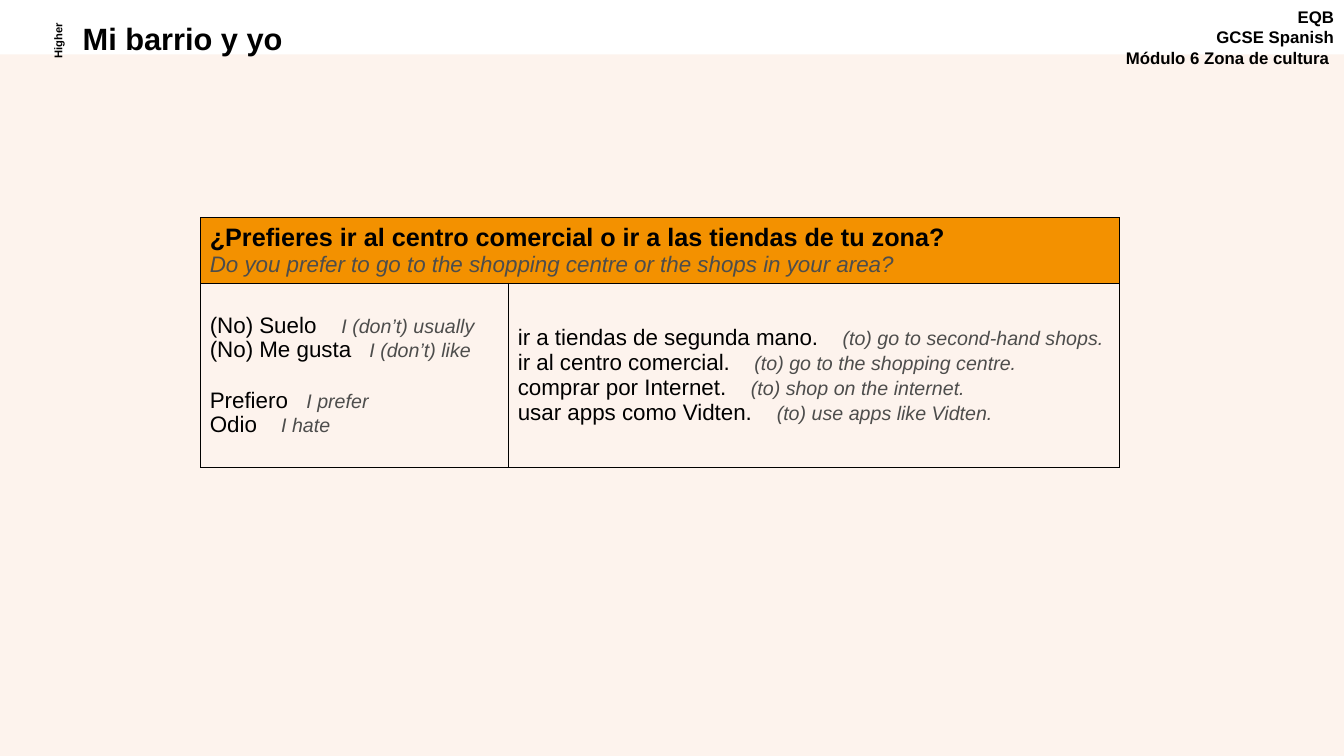
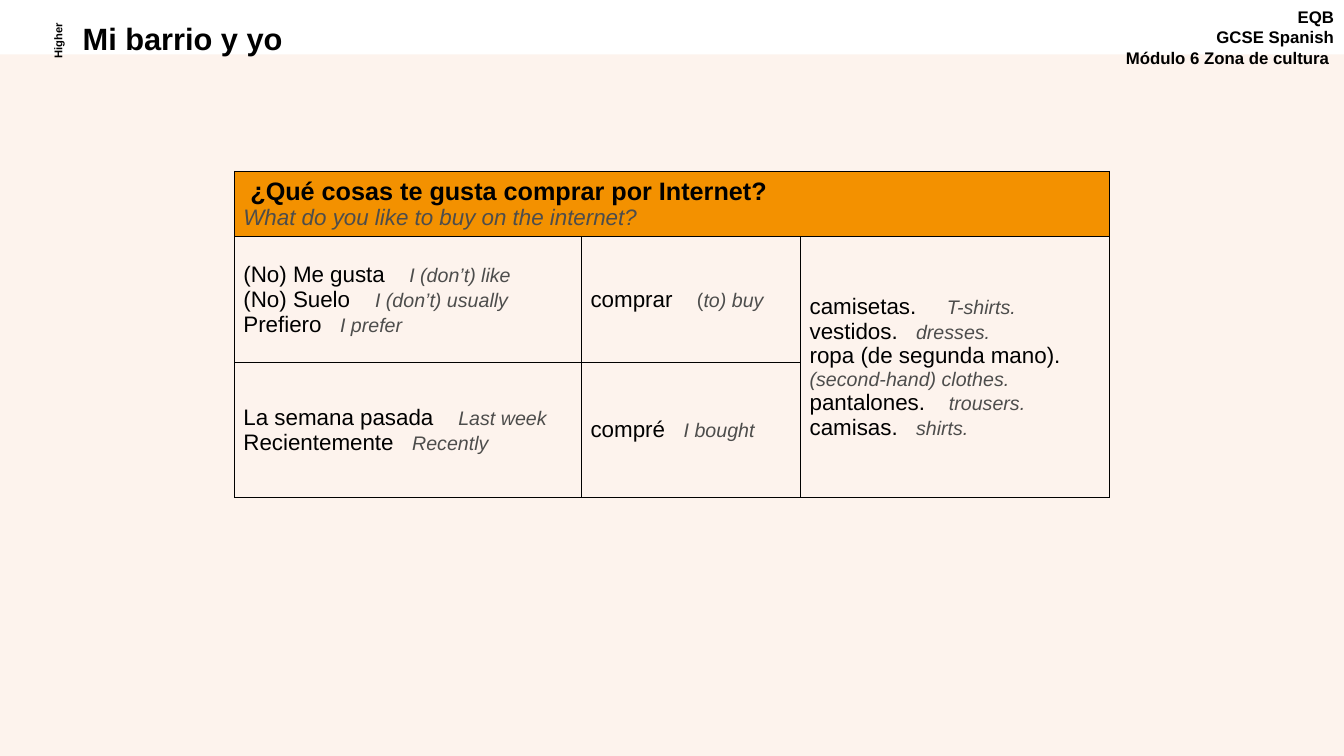
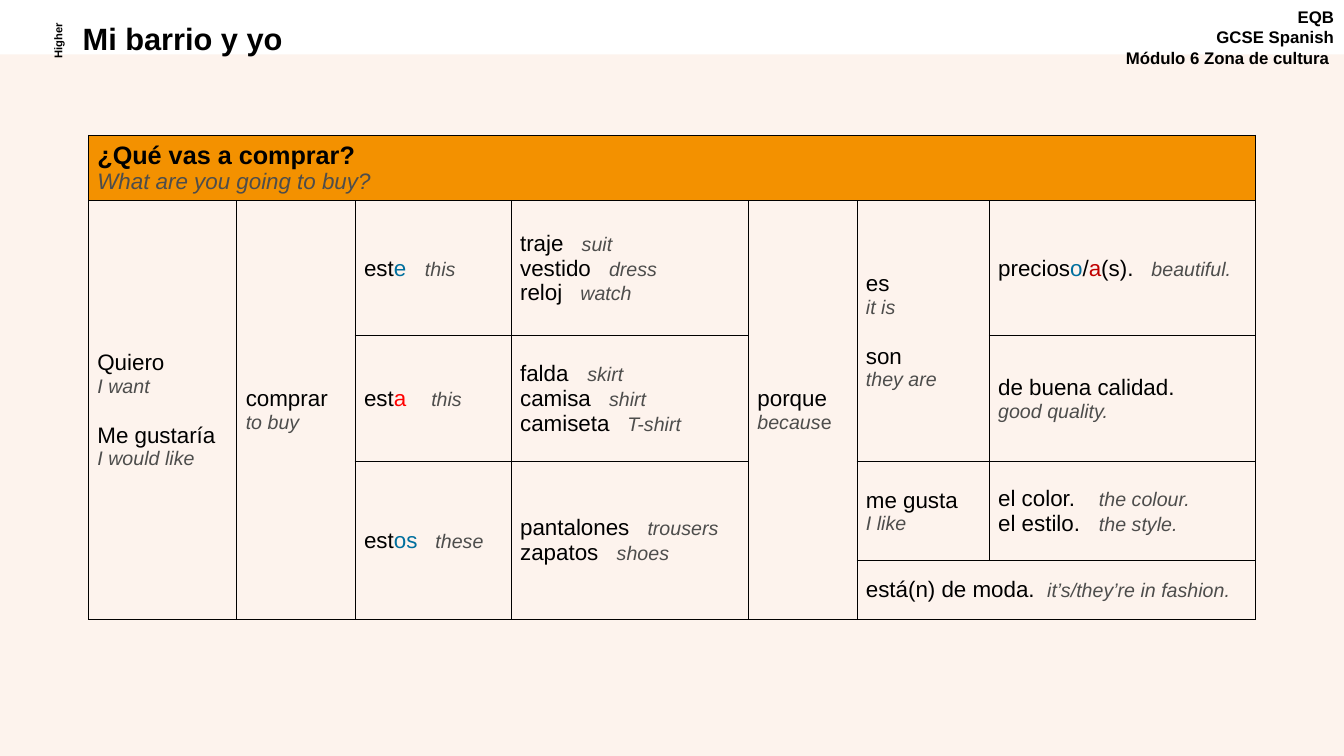
from dataclasses import dataclass

from lxml import etree
from pptx import Presentation
from pptx.dml.color import RGBColor
from pptx.enum.shapes import MSO_SHAPE
from pptx.enum.text import MSO_ANCHOR, PP_ALIGN
from pptx.oxml.ns import qn
from pptx.slide import Slide
from pptx.table import _Cell
from pptx.text.text import TextFrame
from pptx.util import Pt

RECTANGLE = MSO_SHAPE.RECTANGLE
MIDDLE = MSO_ANCHOR.MIDDLE
LEFT, CENTER, RIGHT = PP_ALIGN.LEFT, PP_ALIGN.CENTER, PP_ALIGN.RIGHT

# Colours
BLACK = RGBColor(0x00, 0x00, 0x00)
GREY = RGBColor(0x4D, 0x4D, 0x4C)
ORANGE = RGBColor(0xF3, 0x91, 0x00)
CREAM = RGBColor(0xFD, 0xF3, 0xED)
BLUE = RGBColor(0x00, 0x6F, 0x9E)
DARK_RED = RGBColor(0xC0, 0x00, 0x00)
RED = RGBColor(0xFF, 0x00, 0x00)

# Text formats
FONT = "Arial"
PAGE_TITLE = {"name": FONT, "size": Pt(22), "bold": True, "italic": False}
COURSE = {**PAGE_TITLE, "size": Pt(12)}
TIER = {**PAGE_TITLE, "size": Pt(8)}
QUESTION = {**PAGE_TITLE, "size": Pt(18)}
QUESTION_GLOSS = {"name": FONT, "size": Pt(16), "bold": False, "italic": True}
SPANISH = {"name": FONT, "size": Pt(16), "bold": False, "italic": False}
ENGLISH = {"name": FONT, "size": Pt(14), "bold": False, "italic": True}
ENGLISH_UPRIGHT = {**ENGLISH, "italic": False}

SLIDE_WIDTH, SLIDE_HEIGHT = 960, 540
BODY_TOP = 38.8
GROUP_GAP = 18
BORDER_WIDTH = 0.75
CELL_MARGINS = {"margin_left": Pt(6.4), "margin_right": Pt(6.4),
                "margin_top": Pt(3), "margin_bottom": Pt(3)}


@dataclass(frozen=True)
class Run:
    text: str
    style: dict
    color: RGBColor = BLACK


@dataclass(frozen=True)
class Line:
    runs: tuple[Run, ...]
    tab: float = 0
    gap: float = 0


@dataclass(frozen=True)
class Entry:
    row: int
    col: int
    lines: tuple[Line, ...]
    rows: int = 1
    cols: int = 1


@dataclass(frozen=True)
class Grid:
    left: float
    top: float
    cols: tuple[float, ...]
    rows: tuple[float, ...]
    question: str
    gloss: str
    entries: tuple[Entry, ...]


# Vocabulary lines
def es(text: str, gap: float = 0) -> Line:
    return Line((Run(text, SPANISH),), gap=gap)


def en(text: str) -> Line:
    return Line((Run(text, ENGLISH, GREY),))


def pair(spanish: str, english: str, tab: float, gap: float = 0) -> Line:
    return Line((Run(spanish, SPANISH), Run("\t" + english, ENGLISH, GREY)), tab, gap)


def ending(stem: str, suffix: str, color: RGBColor, english: str, tab: float) -> Line:
    return Line((Run(stem, SPANISH), Run(suffix, SPANISH, color),
                 Run("\t" + english, ENGLISH, GREY)), tab)


# Drawing
def write_lines(frame: TextFrame, lines: tuple[Line, ...],
                align: PP_ALIGN = LEFT, spacing: float = 1.0) -> None:
    for index, line in enumerate(lines):
        paragraph = frame.add_paragraph() if index else frame.paragraphs[0]
        paragraph.alignment = align
        paragraph.line_spacing = spacing
        paragraph.space_before = Pt(line.gap)
        if line.tab:
            stops = etree.SubElement(paragraph._p.get_or_add_pPr(), qn("a:tabLst"))
            etree.SubElement(stops, qn("a:tab"), pos=str(Pt(line.tab)), algn="l")
        for part in line.runs:
            run = paragraph.add_run()
            run.text = part.text
            for key, value in part.style.items():
                setattr(run.font, key, value)
            run.font.color.rgb = part.color


def add_label(slide: Slide, box: tuple[float, ...], texts: tuple[str, ...], style: dict,
              align: PP_ALIGN = LEFT, spacing: float = 1.0, rotation: float = 0) -> None:
    label = slide.shapes.add_textbox(*map(Pt, box))
    label.rotation = rotation
    label.text_frame.word_wrap = True
    lines = tuple(Line((Run(text, style),)) for text in texts)
    write_lines(label.text_frame, lines, align, spacing)


def add_frame(slide: Slide) -> None:
    body = slide.shapes.add_shape(RECTANGLE, 0, Pt(BODY_TOP), Pt(SLIDE_WIDTH),
                                  Pt(SLIDE_HEIGHT - BODY_TOP))
    body.shadow.inherit = False
    body.fill.solid()
    body.fill.fore_color.rgb = CREAM
    body.line.fill.background()
    add_label(slide, (791.5, 1.5, 168.5, 55.5),
              ("EQB", "GCSE Spanish", "Módulo 6 Zona de cultura "), COURSE, RIGHT)
    add_label(slide, (52, 13.5, 495, 31), ("Mi barrio y yo",), PAGE_TITLE, spacing=0.9)
    add_label(slide, (13, 21, 56, 16), ("Higher",), TIER, CENTER, rotation=270)


def style_cell(cell: _Cell, is_header: bool) -> None:
    if is_header:
        cell.fill.solid()
        cell.fill.fore_color.rgb = ORANGE
    else:
        cell.fill.background()
    cell.vertical_anchor = MIDDLE
    for key, value in CELL_MARGINS.items():
        setattr(cell, key, value)
    properties = cell._tc.get_or_add_tcPr()
    for index, side in enumerate(("lnL", "lnR", "lnT", "lnB")):
        border = etree.Element(qn(f"a:{side}"), w=str(Pt(BORDER_WIDTH)))
        fill = etree.SubElement(border, qn("a:solidFill"))
        etree.SubElement(fill, qn("a:srgbClr"), val=str(BLACK))
        properties.insert(index, border)


def add_grid(slide: Slide, grid: Grid) -> None:
    box = (grid.left, grid.top, sum(grid.cols), sum(grid.rows))
    table = slide.shapes.add_table(len(grid.rows), len(grid.cols), *map(Pt, box)).table
    table.first_row = table.horz_banding = False
    for column, width in zip(table.columns, grid.cols):
        column.width = Pt(width)
    for index, (row, height) in enumerate(zip(table.rows, grid.rows)):
        row.height = Pt(height)
        for cell in row.cells:
            style_cell(cell, index == 0)
    heading = Entry(0, 0, (Line((Run(grid.question, QUESTION),)),
                           Line((Run(grid.gloss, QUESTION_GLOSS, GREY),))),
                    cols=len(grid.cols))
    for entry in (heading, *grid.entries):
        cell = table.cell(entry.row, entry.col)
        if entry.rows * entry.cols > 1:
            cell.merge(table.cell(entry.row + entry.rows - 1, entry.col + entry.cols - 1))
        write_lines(cell.text_frame, entry.lines)


# Content
SHOPS = Grid(
    143.5, 155.5, (220, 436), (44, 131.5),
    "¿Prefieres ir al centro comercial o ir a las tiendas de tu zona?",
    "Do you prefer to go to the shopping centre or the shops in your area?",
    (
        Entry(1, 0, (pair("(No) Suelo", "I (don’t) usually", 94),
                     pair("(No) Me gusta", "I (don’t) like", 114),
                     pair("Prefiero", "I prefer", 69, GROUP_GAP),
                     pair("Odio", "I hate", 51))),
        Entry(1, 1, (pair("ir a tiendas de segunda mano.", "(to) go to second-hand shops.", 232),
                     pair("ir al centro comercial.", "(to) go to the shopping centre.", 169),
                     pair("comprar por Internet.", "(to) shop on the internet.", 166.5),
                     pair("usar apps como Vidten.", "(to) use apps like Vidten.", 185))),
    ))

ONLINE = Grid(
    167.5, 122.3, (248, 156.5, 220.5), (43.6, 90, 96.5),
    " ¿Qué cosas te gusta comprar por Internet?",
    "What do you like to buy on the internet?",
    (
        Entry(1, 0, (pair("(No) Me gusta", "I (don’t) like", 118.5),
                     pair("(No) Suelo", "I (don’t) usually", 94),
                     pair("Prefiero", "I prefer", 69))),
        Entry(1, 1, (Line((Run("comprar", SPANISH), Run("\t(", ENGLISH_UPRIGHT, GREY),
                           Run("to) buy", ENGLISH, GREY)), 76),)),
        Entry(1, 2, (pair("camisetas.", "T-shirts.", 98),
                     pair("vestidos.", "dresses.", 76),
                     es("ropa (de segunda mano)."),
                     en("(second-hand) clothes."),
                     pair("pantalones.", "trousers.", 99.5),
                     pair("camisas.", "shirts.", 76)), rows=2),
        Entry(2, 0, (pair("La semana pasada", "Last week", 153.5),
                     pair("Recientemente", "Recently", 120.5))),
        Entry(2, 1, (pair("compré", "I bought", 66.5),)),
    ))

CLOTHES = Grid(
    63.2, 96.7, (106, 84.5, 111.5, 169.5, 77.5, 94.5, 190), (44.4, 96.4, 90, 70.8, 42),
    "¿Qué vas a comprar?", "What are you going to buy?",
    (
        Entry(1, 0, (es("Quiero"), en("I want"),
                     es("Me gustaría", GROUP_GAP), en("I would like")), rows=4),
        Entry(1, 1, (es("comprar"), en("to buy")), rows=4),
        Entry(1, 2, (ending("est", "e", BLUE, "this", 43.5),)),
        Entry(1, 3, (pair("traje", "suit", 44), pair("vestido", "dress", 63.5),
                     pair("reloj", "watch", 43))),
        Entry(1, 4, (es("porque"), Line((Run("becaus", ENGLISH, GREY),
                                         Run("e", ENGLISH_UPRIGHT, GREY)))), rows=4),
        Entry(1, 5, (es("es"), en("it is"),
                     es("son", GROUP_GAP), en("they are")), rows=2),
        Entry(1, 6, (Line((Run("precios", SPANISH), Run("o", SPANISH, BLUE),
                           Run("/", SPANISH), Run("a", SPANISH, DARK_RED),
                           Run("(s).", SPANISH), Run("\tbeautiful.", ENGLISH, GREY)), 109.5),)),
        Entry(2, 2, (ending("est", "a", RED, "this", 48),)),
        Entry(2, 3, (pair("falda", "skirt", 48), pair("camisa", "shirt", 63.5),
                     pair("camiseta", "T-shirt", 76.5))),
        Entry(2, 6, (es("de buena calidad."), en("good quality."))),
        Entry(3, 2, (ending("est", "os", BLUE, "these", 51),), rows=2),
        Entry(3, 3, (pair("pantalones", "trousers", 91),
                     pair("zapatos", "shoes", 69)), rows=2),
        Entry(3, 5, (es("me gusta"), en("I like"))),
        Entry(3, 6, (pair("el color.", "the colour.", 72),
                     pair("el estilo.", "the style.", 72))),
        Entry(4, 5, (pair("está(n) de moda.", "it’s/they’re in fashion.", 129.5),), cols=2),
    ))


def main() -> None:
    deck = Presentation()
    deck.slide_width, deck.slide_height = Pt(SLIDE_WIDTH), Pt(SLIDE_HEIGHT)
    for grid in (SHOPS, ONLINE, CLOTHES):
        slide = deck.slides.add_slide(deck.slide_layouts[6])
        add_frame(slide)
        add_grid(slide, grid)
    deck.save("out.pptx")


if __name__ == "__main__":
    main()
